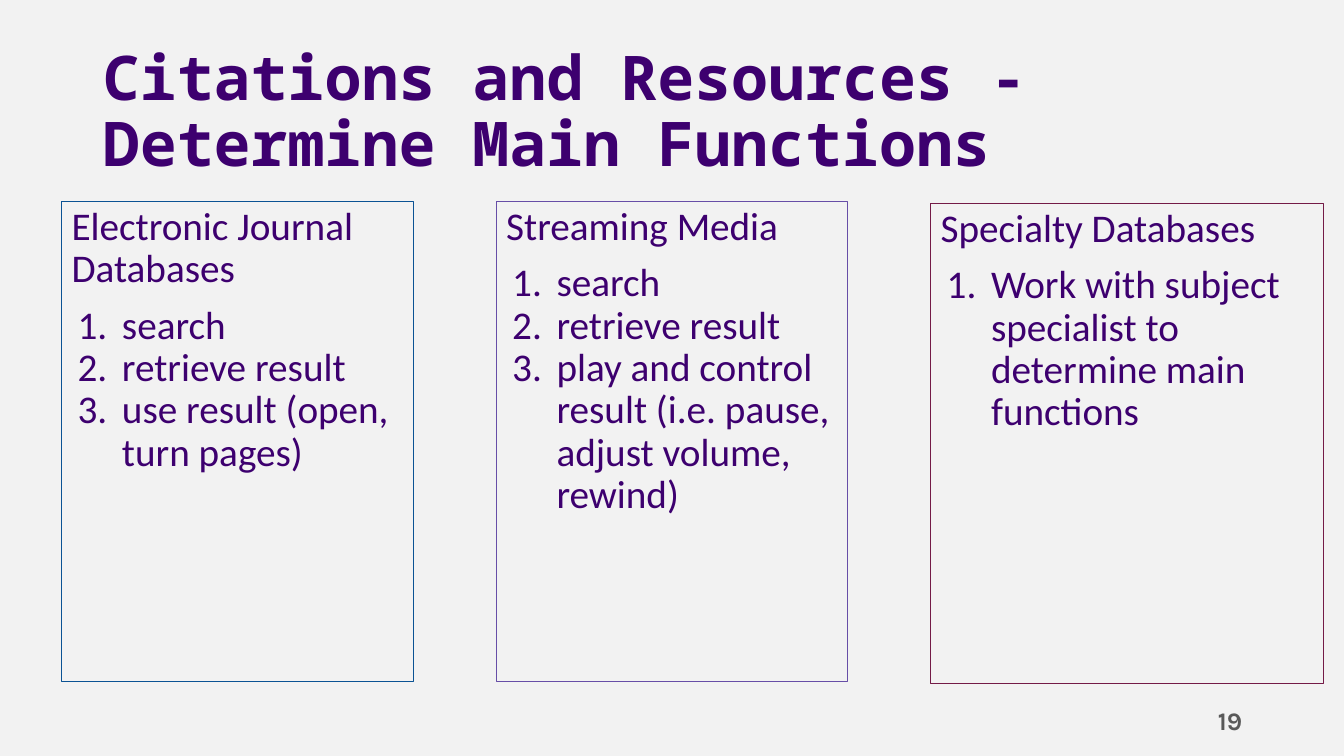
from lxml.etree import SubElement
from pptx import Presentation
from pptx.dml.color import RGBColor
from pptx.enum.text import MSO_ANCHOR, MSO_AUTO_SIZE, PP_ALIGN
from pptx.oxml.ns import qn
from pptx.util import Inches, Pt

COLORS = {
    "background": "F2F2F2",
    "purple": "3D006F",
    "gray": "595959",
    "journals": "0B5394",
    "media": "674EA7",
    "specialty": "741B47",
}
TITLE = ["Citations and Resources -", "Determine Main Functions"]
COLUMNS = [
    ("journals", 2, 3.49, "Electronic Journal Databases",
     ["search", "retrieve result", "use result (open, turn pages)"]),
    ("media", 2, 3.49, "Streaming Media",
     ["search", "retrieve result",
      "play and control result (i.e. pause, adjust volume, rewind)"]),
    ("specialty", 2.02, 3.9, "Specialty Databases",
     ["Work with subject specialist to determine main functions"]),
]
PAGE = "19"
LEFT, STEP, HEIGHT = 0.61, 4.31, 4.76


def rgb(name):
    return RGBColor.from_string(COLORS[name])


def place(sp, left, top, width, height, anchor):
    sp.left, sp.top = Inches(left), Inches(top)
    sp.width, sp.height = Inches(width), Inches(height)
    tf = sp.text_frame
    tf.word_wrap = True
    tf.auto_size = MSO_AUTO_SIZE.NONE
    tf.vertical_anchor = anchor
    tf.margin_left = tf.margin_right = Inches(0.1)
    tf.margin_top = tf.margin_bottom = Inches(0.05)
    return tf


def write(tf, text, size=28, font="Calibri", color="purple", bold=False,
          align=PP_ALIGN.LEFT, spacing=0.9, before=0, numbered=False):
    p = tf.paragraphs[0] if not tf.text else tf.add_paragraph()
    p.alignment = align
    p.line_spacing = spacing
    p.space_before, p.space_after = Pt(before), Pt(0)
    pPr = p._p.get_or_add_pPr()
    pPr.set("marL", str(Inches(0.5 if numbered else 0)))
    pPr.set("indent", str(Inches(-0.44 if numbered else 0)))
    if numbered:
        clr = SubElement(pPr, qn("a:buClr"))
        SubElement(clr, qn("a:srgbClr"), val=COLORS[color])
        SubElement(pPr, qn("a:buAutoNum"), type="arabicPeriod")
    else:
        SubElement(pPr, qn("a:buNone"))
    r = p.add_run()
    r.text = text
    r.font.size = Pt(size)
    r.font.name = font
    r.font.bold = bold
    r.font.color.rgb = rgb(color)


prs = Presentation()
prs.slide_width, prs.slide_height = Inches(13.33), Inches(7.5)
s = prs.slides.add_slide(prs.slide_layouts.get_by_name("Comparison"))
s.background.fill.solid()
s.background.fill.fore_color.rgb = rgb("background")

tf = place(s.shapes.title, 0.92, 0.4, 11.5, 1.45, MSO_ANCHOR.MIDDLE)
for line in TITLE:
    write(tf, line, size=44, font="Noto Sans Mono", bold=True)

title, *bodies = s.placeholders
for i, (sp, column) in enumerate(zip(bodies, COLUMNS)):
    color, top, width, heading, steps = column
    tf = place(sp, LEFT + i * STEP, top, width, HEIGHT, MSO_ANCHOR.TOP)
    sp.line.color.rgb = rgb(color)
    sp.line.width = Pt(0.75)
    write(tf, heading, before=10)
    for n, step in enumerate(steps):
        write(tf, step, before=0 if n else 10, numbered=True)
for sp in bodies[len(COLUMNS):]:
    sp.element.getparent().remove(sp.element)

number = s.shapes.add_textbox(0, 0, 0, 0)
tf = place(number, 10.96, 6.95, 1.46, 0.4, MSO_ANCHOR.MIDDLE)
write(tf, PAGE, size=18, font="Karla", color="gray", bold=True,
      align=PP_ALIGN.RIGHT, spacing=1.0)

prs.save("out.pptx")
